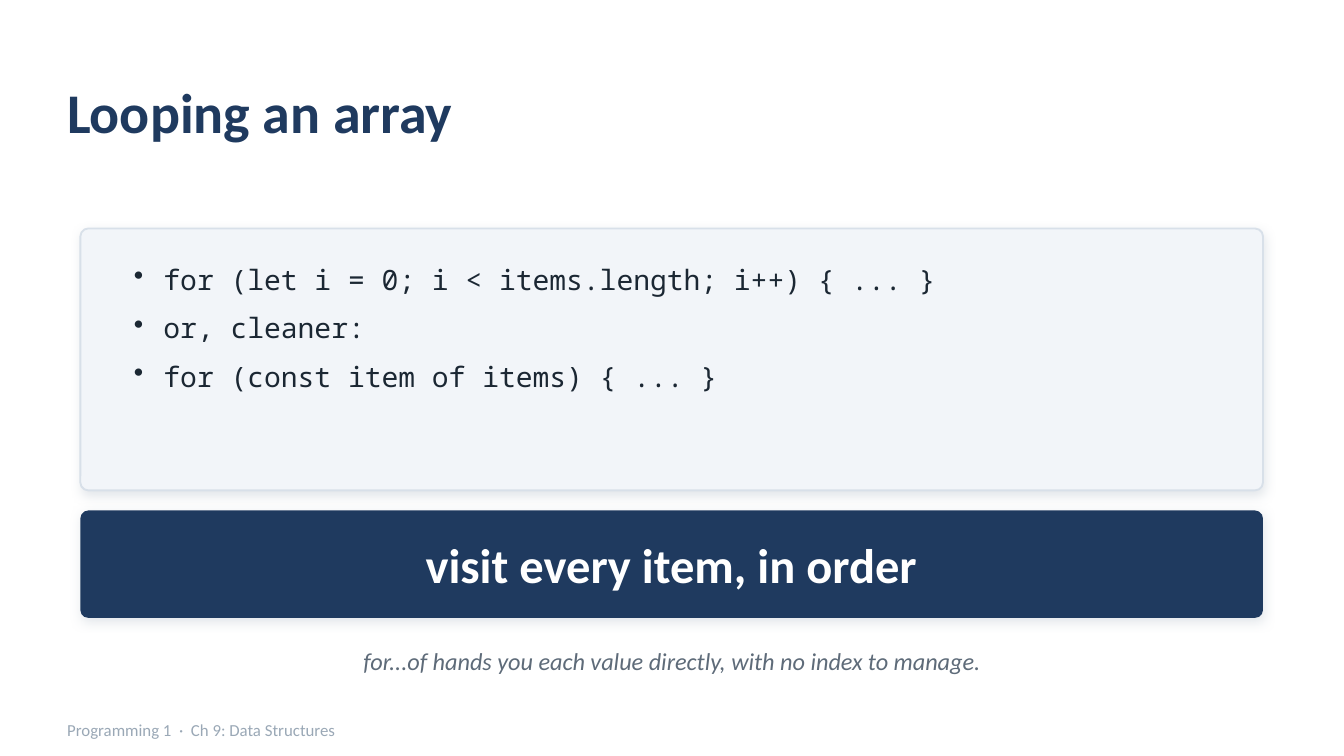
import pptx
import pptx.dml.color
import pptx.enum.shapes
import pptx.enum.text
import pptx.oxml
import pptx.oxml.ns
import pptx.util
from pptx.util import Cm

COLORS = {
    "navy": "1F3A5F",
    "panel": "F2F5F9",
    "border": "D8E0E9",
    "ink": "1B2733",
    "note": "5E6B79",
    "muted": "9AA8B6",
    "white": "FFFFFF",
}
ALIGN = pptx.enum.text.PP_ALIGN
ANCHOR = pptx.enum.text.MSO_ANCHOR
CODE_LINES = [
    "for (let i = 0; i < items.length; i++) { ... }",
    "or, cleaner:",
    "for (const item of items) { ... }",
]


def rgb(name):
    """Return the named palette colour."""
    return pptx.dml.color.RGBColor.from_string(COLORS[name])


def add_bullet(paragraph, indent):
    """Give a paragraph a round bullet with a hanging indent."""
    properties = paragraph._p.get_or_add_pPr()
    properties.set("marL", str(indent))
    properties.set("indent", str(-indent))
    namespace = pptx.oxml.ns.nsdecls("a")
    properties.append(pptx.oxml.parse_xml(f'<a:buChar {namespace} char="•"/>'))


def add_text(slide, box, *lines, size, color, font="Calibri", bold=False, italic=False,
             align=ALIGN.LEFT, anchor=ANCHOR.MIDDLE, inset=(0, 0), bullet_indent=None,
             space_after=0):
    """Add a text box with one paragraph per line."""
    frame = slide.shapes.add_textbox(*box).text_frame
    frame.word_wrap = True
    frame.vertical_anchor = anchor
    frame.margin_left = frame.margin_right = inset[0]
    frame.margin_top = frame.margin_bottom = inset[1]
    for index, line in enumerate(lines):
        paragraph = frame.add_paragraph() if index else frame.paragraphs[0]
        paragraph.alignment = align
        paragraph.space_after = pptx.util.Pt(space_after)
        if bullet_indent:
            add_bullet(paragraph, bullet_indent)
        run = paragraph.add_run()
        run.text = line
        run.font.name = font
        run.font.size = pptx.util.Pt(size)
        run.font.bold = bold
        run.font.italic = italic
        run.font.color.rgb = rgb(color)


def add_card(slide, box, fill, border=None):
    """Add a rounded card with a soft shadow below it."""
    left, top, width, height = box
    shape = slide.shapes.add_shape(
        pptx.enum.shapes.MSO_SHAPE.ROUNDED_RECTANGLE, left, top, width, height)
    shape.adjustments[0] = Cm(0.15) / height
    shape.fill.solid()
    shape.fill.fore_color.rgb = rgb(fill)
    if border:
        shape.line.color.rgb = rgb(border)
        shape.line.width = pptx.util.Pt(1)
    else:
        shape.line.fill.background()
    shape.shadow.inherit = False
    effects = shape._element.spPr.find(pptx.oxml.ns.qn("a:effectLst"))
    effects.append(pptx.oxml.parse_xml(
        f'<a:outerShdw {pptx.oxml.ns.nsdecls("a")} blurRad="{pptx.util.Pt(6)}" '
        f'dist="{pptx.util.Pt(2)}" dir="5400000" algn="bl" rotWithShape="0">'
        f'<a:srgbClr val="{COLORS["muted"]}"><a:alpha val="28000"/></a:srgbClr>'
        '</a:outerShdw>'))


def add_code_panel(slide, box, lines):
    """Add the bordered card that lists the loop forms."""
    left, top, width, height = box
    add_card(slide, box, "panel", border="border")
    margin = Cm(0.76)
    text_box = (left + margin, top + Cm(0.51), width - 2 * margin, height - Cm(0.89))
    add_text(slide, text_box, *lines, size=15, color="ink", font="Noto Sans Mono",
             anchor=ANCHOR.TOP, inset=(Cm(0.25), Cm(0.13)), bullet_indent=Cm(0.56),
             space_after=8)


def add_banner(slide, box, text):
    """Add the dark card with the key message."""
    left, top, width, height = box
    add_card(slide, box, "navy")
    margin = Cm(0.08)
    add_text(slide, (left, top + margin, width, height - 2 * margin), text,
             size=26, color="white", bold=True, align=ALIGN.CENTER)


def build_slide(presentation):
    """Place every region of the array loop slide."""
    slide = presentation.slides.add_slide(presentation.slide_layouts[6])
    slide.background.fill.solid()
    slide.background.fill.fore_color.rgb = rgb("white")
    margin, left, width = Cm(1.27), Cm(1.52), Cm(22.35)
    add_text(slide, (margin, Cm(1.02), presentation.slide_width - 2 * margin, Cm(2.16)),
             "Looping an array", size=30, color="navy", bold=True)
    add_code_panel(slide, (left, Cm(4.32), width, Cm(4.95)), CODE_LINES)
    add_banner(slide, (left, Cm(9.65), width, Cm(2.03)), "visit every item, in order")
    add_text(slide, (left, Cm(11.99), width, Cm(1.02)),
             "for...of hands you each value directly, with no index to manage.",
             size=13, color="note", italic=True, align=ALIGN.CENTER)
    add_text(slide, (margin, Cm(13.46), Cm(20.32), Cm(0.66)),
             "Programming 1  ·  Ch 9: Data Structures", size=9, color="muted")


def main():
    """Build and save the presentation."""
    presentation = pptx.Presentation()
    presentation.slide_width = Cm(25.4)
    presentation.slide_height = Cm(14.29)
    build_slide(presentation)
    presentation.save("out.pptx")


if __name__ == "__main__":
    main()
